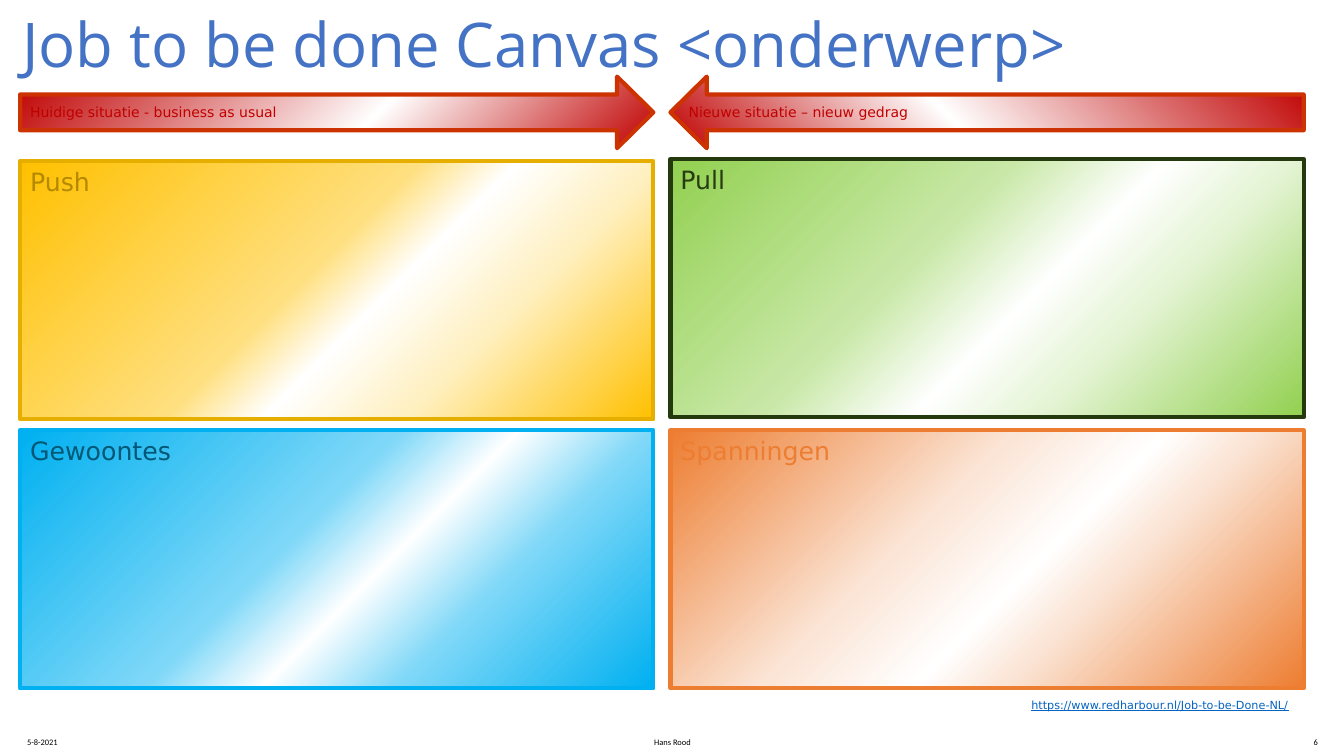
from copy import deepcopy

from pptx import Presentation
from pptx.dml.color import RGBColor
from pptx.enum.shapes import MSO_SHAPE as Shape
from pptx.enum.text import MSO_ANCHOR as Anchor, PP_ALIGN as Align
from pptx.oxml.ns import qn
from pptx.util import Inches, Pt

WHITE = RGBColor(0xFF, 0xFF, 0xFF)
BLACK = RGBColor(0x00, 0x00, 0x00)
TITLE_BLUE = RGBColor(0x44, 0x72, 0xC4)
LINK_BLUE = RGBColor(0x05, 0x63, 0xC1)
RED = RGBColor(0xC0, 0x00, 0x00)
RED_EDGE = RGBColor(0xCC, 0x33, 0x00)
ORANGE = RGBColor(0xED, 0x7D, 0x31)
ORANGE_PALE = RGBColor(0xFB, 0xE5, 0xD6)
GREEN = RGBColor(0x92, 0xD0, 0x50)
GREEN_LIGHT = RGBColor(0xC9, 0xE8, 0xA8)
GREEN_PALE = RGBColor(0xE4, 0xF4, 0xD4)
GREEN_EDGE = RGBColor(0x25, 0x39, 0x0F)
GREEN_TEXT = RGBColor(0x27, 0x3C, 0x10)
YELLOW = RGBColor(0xFF, 0xC0, 0x00)
YELLOW_LIGHT = RGBColor(0xFF, 0xE0, 0x80)
YELLOW_PALE = RGBColor(0xFF, 0xF0, 0xC0)
YELLOW_EDGE = RGBColor(0xE6, 0xAF, 0x00)
YELLOW_TEXT = RGBColor(0xB4, 0x89, 0x00)
CYAN = RGBColor(0x00, 0xB0, 0xF0)
CYAN_LIGHT = RGBColor(0x80, 0xD8, 0xF8)
CYAN_TEXT = RGBColor(0x00, 0x57, 0x76)

LEFT_COLUMN, RIGHT_COLUMN = 0.2, 6.65
COLUMN_WIDTH = 6.28
PANEL_HEIGHT, ARROW_HEIGHT = 2.56, 0.71


def write_text(shape, text, font="DejaVu Sans", size=10, color=BLACK, align=Align.LEFT,
               anchor=Anchor.TOP, inset=(0.1, 0.05), spacing=None, underline=None):
    frame = shape.text_frame
    frame.word_wrap = True
    frame.vertical_anchor = anchor
    frame.margin_left = frame.margin_right = Inches(inset[0])
    frame.margin_top = frame.margin_bottom = Inches(inset[1])
    para = frame.paragraphs[0]
    para.alignment = align
    para.line_spacing = spacing
    span = para.add_run()
    span.text = text
    span.font.name = font
    span.font.size = Pt(size)
    span.font.color.rgb = color
    span.font.underline = underline


def add_label(page, box, text, **style):
    write_text(page.shapes.add_textbox(*map(Inches, box)), text, **style)


def fill_gradient(shape, stops, angle):
    """Stops are (percent, colour) pairs; the angle runs counter-clockwise."""
    shape.fill.gradient()
    shape.fill.gradient_angle = angle
    stop_list = shape.fill._fill._gradFill.find(qn("a:gsLst"))
    template = deepcopy(stop_list[0])
    for stop in list(stop_list):
        stop_list.remove(stop)
    for _ in stops:
        stop_list.append(deepcopy(template))
    for stop, (percent, color) in zip(shape.fill.gradient_stops, stops):
        stop.position = percent / 100
        stop.color.rgb = color


def add_block(page, kind, box, stops, edge, angle=315):
    shape = page.shapes.add_shape(kind, *map(Inches, box))
    shape.shadow.inherit = False
    fill_gradient(shape, stops, angle)
    shape.line.color.rgb = edge
    shape.line.width = Pt(3)
    return shape


def add_panel(page, left, top, heading, stops, edge, color):
    box = (left, top, COLUMN_WIDTH, PANEL_HEIGHT)
    panel = add_block(page, Shape.RECTANGLE, box, stops, edge)
    write_text(panel, heading, size=18, color=color)


def add_situation_arrow(page, left, kind, angle, text, side_inset):
    box = (left, 0.76, COLUMN_WIDTH, ARROW_HEIGHT)
    stops = [(0, RED), (56, WHITE), (100, RED)]
    arrow = add_block(page, kind, box, stops, RED_EDGE, angle)
    arrow.adjustments[0] = 0.5
    arrow.adjustments[1] = 0.507
    write_text(arrow, text, color=RED, anchor=Anchor.MIDDLE, inset=(side_inset, 0.05))


def add_canvas(page):
    # Four forces
    add_panel(page, RIGHT_COLUMN, 4.27, "Spanningen",
              [(0, ORANGE), (39, ORANGE_PALE), (56, WHITE), (66, ORANGE_PALE), (100, ORANGE)],
              ORANGE, ORANGE)
    add_panel(page, RIGHT_COLUMN, 1.58, "Pull",
              [(0, GREEN), (39, GREEN_LIGHT), (56, WHITE), (70, GREEN_PALE), (100, GREEN)],
              GREEN_EDGE, GREEN_TEXT)
    add_panel(page, LEFT_COLUMN, 1.6, "Push",
              [(0, YELLOW), (45, YELLOW_LIGHT), (56, WHITE), (72, YELLOW_PALE), (100, YELLOW)],
              YELLOW_EDGE, YELLOW_TEXT)
    add_panel(page, LEFT_COLUMN, 4.27, "Gewoontes",
              [(0, CYAN), (43, CYAN_LIGHT), (56, WHITE), (71, CYAN_LIGHT), (100, CYAN)],
              CYAN, CYAN_TEXT)
    # Current and new situation
    add_situation_arrow(page, LEFT_COLUMN, Shape.RIGHT_ARROW, 315,
                        "Huidige situatie - business as usual", 0.1)
    add_situation_arrow(page, RIGHT_COLUMN, Shape.LEFT_ARROW, 225,
                        "Nieuwe situatie – nieuw gedrag", 0)


def add_footer(page, top):
    small = {"font": "Calibri", "size": 6}
    add_label(page, (0.17, top, 3, 0.24), "5-8-2021", **small)
    add_label(page, (10.17, top, 3, 0.24), "6", align=Align.RIGHT, **small)
    add_label(page, (4.42, top, 4.5, 0.24), "Hans Rood", align=Align.CENTER, **small)


def main():
    deck = Presentation()
    deck.slide_width, deck.slide_height = Inches(13.33), Inches(7.5)
    page = deck.slides.add_slide(deck.slide_layouts[6])
    add_label(page, (0.09, 0.05, 11.64, 0.84), "Job to be done Canvas <onderwerp>",
              font="Open Sans", size=44, color=TITLE_BLUE, anchor=Anchor.MIDDLE,
              inset=(0.13, 0.13), spacing=0.9)
    add_canvas(page)
    add_footer(page, 7.26)
    # Web address
    add_label(page, (10.13, 6.88, 2.95, 0.24), "https://www.redharbour.nl/Job-to-be-Done-NL/",
              size=8, color=LINK_BLUE, underline=True)
    deck.save("out.pptx")


if __name__ == "__main__":
    main()
